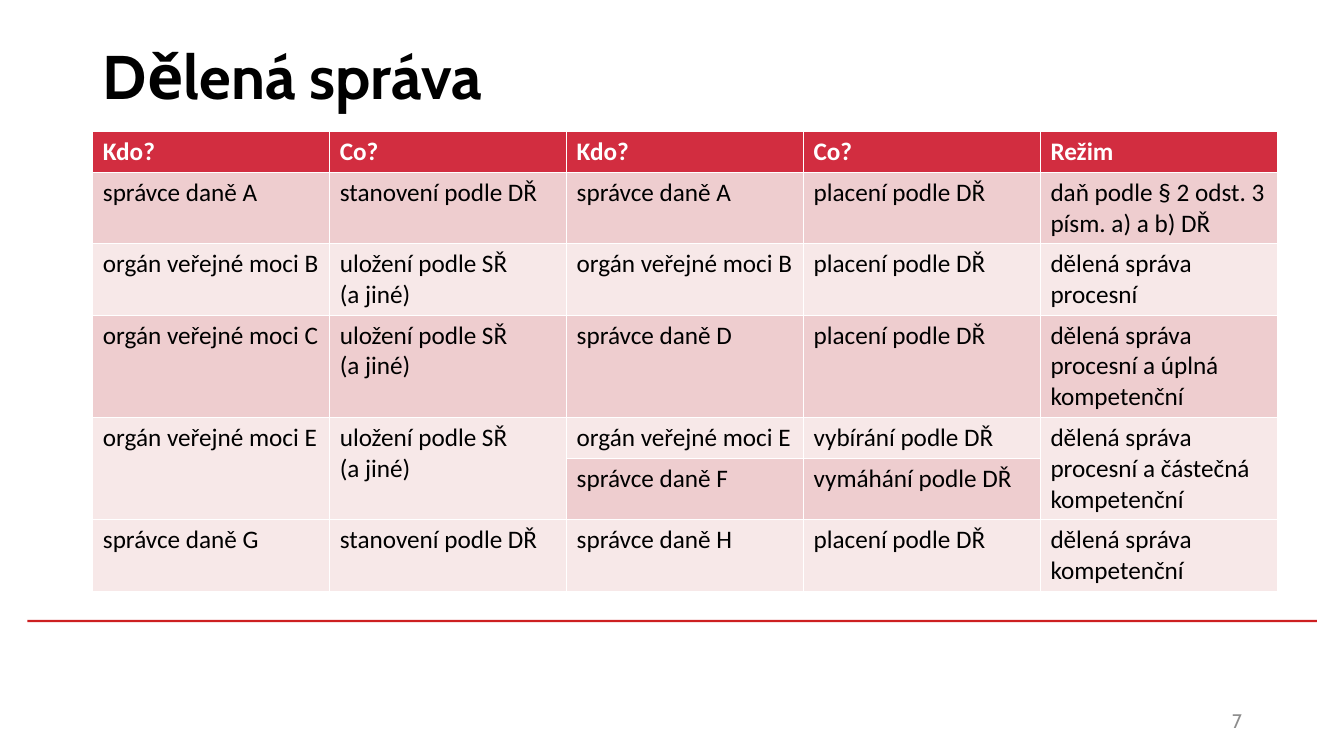
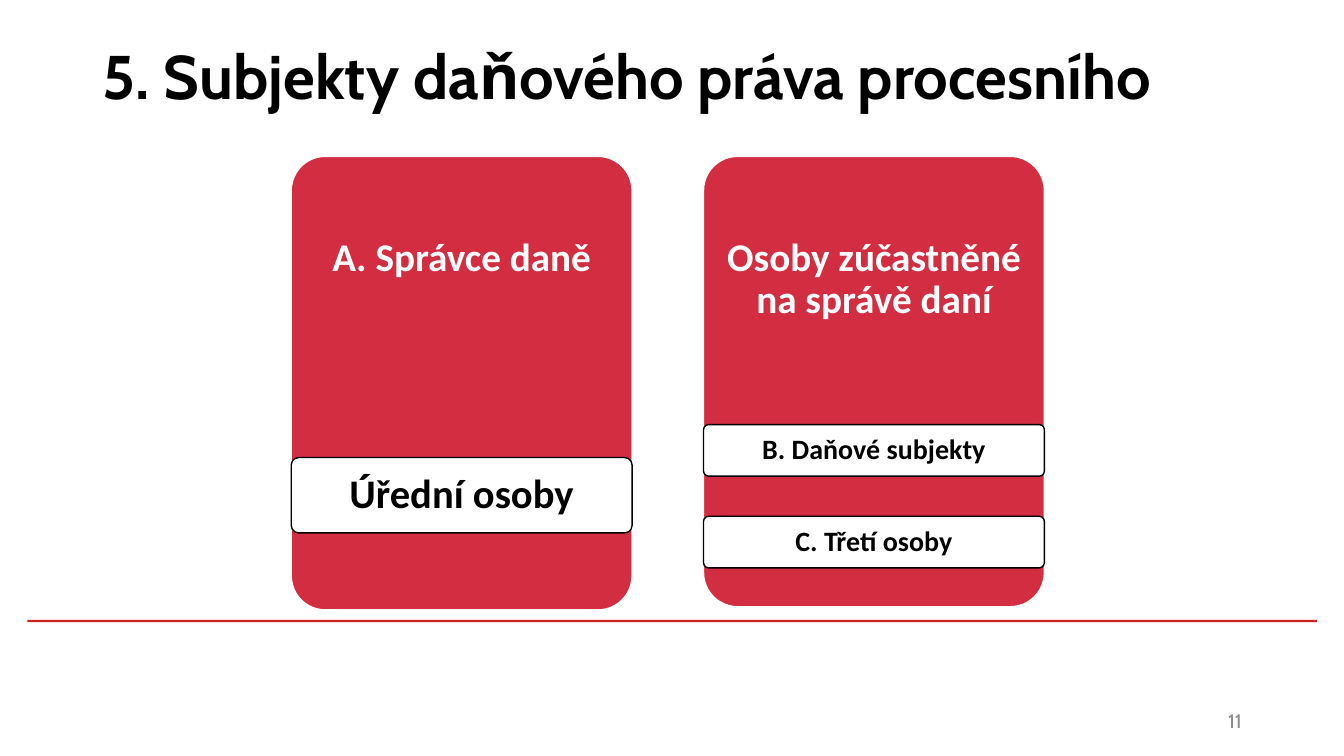
from pptx import Presentation
from pptx.dml.color import RGBColor
from pptx.enum.shapes import MSO_SHAPE
from pptx.enum.text import MSO_ANCHOR, PP_ALIGN
from pptx.util import Cm, Pt

RECTANGLE, ROUNDED = MSO_SHAPE.RECTANGLE, MSO_SHAPE.ROUNDED_RECTANGLE
TOP, MIDDLE = MSO_ANCHOR.TOP, MSO_ANCHOR.MIDDLE
LEFT, CENTER, RIGHT = PP_ALIGN.LEFT, PP_ALIGN.CENTER, PP_ALIGN.RIGHT

COLORS = {
    "red": "D22D40",
    "rule": "CD1F21",
    "band_dark": "EECDCF",
    "band_light": "F7E8E8",
    "white": "FFFFFF",
    "black": "000000",
    "number": "8C8C8C",
}
TITLE_FONT, BODY_FONT = "Cabin", "Calibri"

HEADERS = ["Kdo?", "Co?", "Kdo?", "Co?", "Režim"]
IMPOSED = "uložení podle SŘ\v(a jiné)"
ASSESSED = "stanovení podle DŘ"
PAID = "placení podle DŘ"
REGIMES = [
    ["správce daně A", ASSESSED, "správce daně A", PAID,
     "daň podle § 2 odst. 3 písm. a) a b) DŘ"],
    ["orgán veřejné moci B", IMPOSED, "orgán veřejné moci B", PAID,
     "dělená správa procesní"],
    ["orgán veřejné moci C", IMPOSED, "správce daně D", PAID,
     "dělená správa procesní a úplná kompetenční"],
    ["orgán veřejné moci E", IMPOSED, "orgán veřejné moci E", "vybírání podle DŘ",
     "dělená správa procesní a částečná kompetenční"],
    ["", "", "správce daně F", "vymáhání podle DŘ", ""],
    ["správce daně G", ASSESSED, "správce daně H", PAID,
     "dělená správa kompetenční"],
]
ROW_HEIGHTS = [1.03, 1.8, 1.8, 2.58, 1.03, 1.55, 1.8]
SPLIT_ROW, SHARED_COLUMNS = 4, (0, 1, 4)


def rgb(name):
    """Return the palette colour with the given name."""
    return RGBColor.from_string(COLORS[name])


def style(paragraph, size, color, font=BODY_FONT, bold=False, align=LEFT):
    """Set the font and alignment of a paragraph."""
    paragraph.alignment = align
    paragraph.font.name = font
    paragraph.font.size = Pt(size)
    paragraph.font.bold = bold
    paragraph.font.color.rgb = rgb(color)


def add_text(slide, box, text, **look):
    """Place one line of vertically centred text in a box."""
    frame = slide.shapes.add_textbox(*map(Cm, box)).text_frame
    frame.word_wrap = True
    frame.vertical_anchor = MIDDLE
    frame.text = text
    style(frame.paragraphs[0], font=TITLE_FONT, **look)


def add_panel(slide, kind, box, fill, line=None):
    """Draw a filled shape without shadow, outlined if a line colour is given."""
    panel = slide.shapes.add_shape(kind, *map(Cm, box))
    panel.shadow.inherit = False
    panel.fill.solid()
    panel.fill.fore_color.rgb = rgb(fill)
    if line:
        panel.line.color.rgb = rgb(line)
        panel.line.width = Pt(1)
    else:
        panel.line.fill.background()
    return panel


def add_frame_slide(deck, title, number):
    """Add a slide with the shared rule, title and slide number."""
    slide = deck.slides.add_slide(deck.slide_layouts[6])
    add_panel(slide, RECTANGLE, (0.69, 15.62, 32.5, 0.06), "rule")
    add_text(slide, (2.34, 0.05, 29.21, 3.68), title, size=44, color="black", bold=True)
    add_text(slide, (23.93, 17.65, 7.62, 1.02), str(number), size=14, color="number",
             align=RIGHT)
    return slide


def add_regime_table(slide, left, top, width):
    """Draw the banded table of regimes with its split row merged."""
    rows = [HEADERS] + REGIMES
    table = slide.shapes.add_table(len(rows), len(HEADERS), Cm(left), Cm(top),
                                   Cm(width), Cm(sum(ROW_HEIGHTS))).table
    table.horz_banding = False
    for row, height in zip(table.rows, ROW_HEIGHTS):
        row.height = Cm(height)
    for r, texts in enumerate(rows):
        header = r == 0
        fill = "red" if header else ("band_light", "band_dark")[r % 2]
        if r == len(rows) - 1:
            fill = "band_light"
        for c, text in enumerate(texts):
            cell = table.cell(r, c)
            cell.fill.solid()
            cell.fill.fore_color.rgb = rgb(fill)
            cell.text = text
            style(cell.text_frame.paragraphs[0], 18, "white" if header else "black",
                  bold=header)
    for c in SHARED_COLUMNS:
        table.cell(SPLIT_ROW, c).merge(table.cell(SPLIT_ROW + 1, c))


def write_panel(panel, text, size, color, anchor, margins):
    """Write bold centred text in a rounded panel."""
    panel.adjustments[0] = 0.1
    frame = panel.text_frame
    frame.word_wrap = True
    frame.vertical_anchor = anchor
    side, upper = margins
    frame.margin_left = frame.margin_right = Cm(side)
    frame.margin_top, frame.margin_bottom = Cm(upper), Cm(0)
    frame.text = text
    style(frame.paragraphs[0], size, color, bold=True, align=CENTER)
    frame.paragraphs[0].line_spacing = 0.9


def add_subject_card(slide, box, heading, members, first, height, pitch, size):
    """Draw a red card with a heading and white member labels placed from its top."""
    left, top, width, _ = box
    card = add_panel(slide, ROUNDED, box, "red", "white")
    write_panel(card, heading, 28, "white", TOP, (0.2, 1.8))
    for i, member in enumerate(members):
        label = add_panel(slide, ROUNDED, (left, top + first + i * pitch, width, height),
                          "white", "black")
        write_panel(label, member, size, "black", MIDDLE, (0.2, 0))


def main():
    """Build and save both slides."""
    deck = Presentation()
    deck.slide_width, deck.slide_height = Cm(33.87), Cm(19.05)

    regimes = add_frame_slide(deck, "Dělená správa", 7)
    add_regime_table(regimes, 2.34, 3.31, 29.85)

    subjects = add_frame_slide(deck, "5. Subjekty daňového práva procesního", 11)
    add_subject_card(subjects, (7.34, 3.94, 8.59, 11.43), "A. Správce daně",
                     ["Úřední osoby"], first=7.59, height=1.9, pitch=0, size=29)
    add_subject_card(subjects, (17.73, 3.94, 8.59, 11.35),
                     "Osoby zúčastněné na správě daní",
                     ["B. Daňové subjekty", "C. Třetí osoby"],
                     first=6.76, height=1.3, pitch=2.31, size=20)
    deck.save("out.pptx")


if __name__ == "__main__":
    main()
